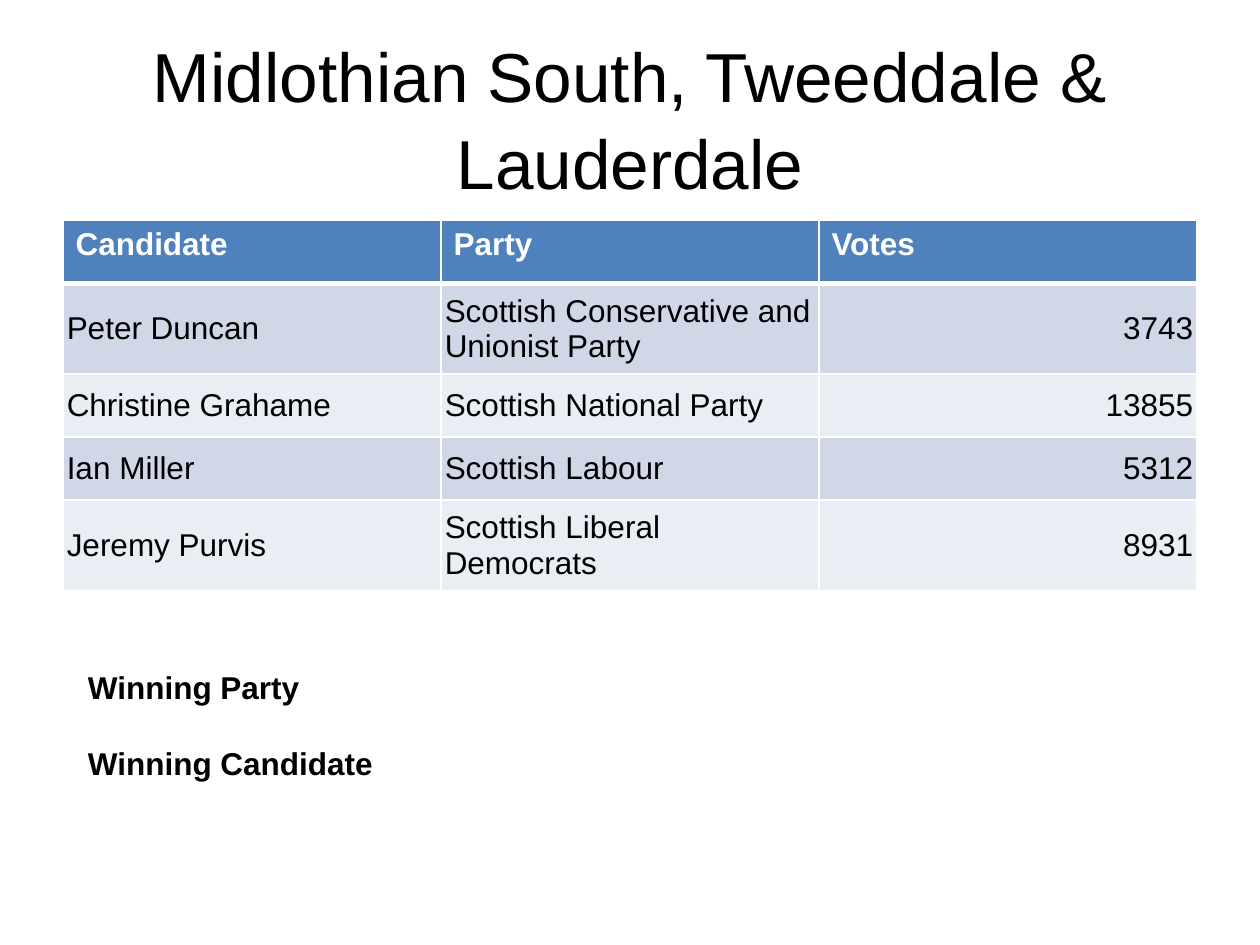
from dataclasses import dataclass

from lxml.etree import SubElement
from pptx import Presentation
from pptx.dml.color import RGBColor
from pptx.enum.text import MSO_ANCHOR, MSO_AUTO_SIZE, PP_ALIGN
from pptx.oxml.ns import qn
from pptx.util import Inches, Pt


@dataclass(frozen=True)
class Theme:
    """Colours, font and type sizes of the results slide."""

    font: str = "Arial"
    title_size: float = 39.6
    body_size: float = 18
    text: str = "000000"
    inverse: str = "FFFFFF"
    header: str = "4F81BD"
    bands: tuple = ("D0D8E8", "E9EDF4")
    thin_rule: float = 1
    thick_rule: float = 3


class ResultsSlide:
    """Draws styled elements on one slide, placed by shares of its size."""

    def __init__(self, presentation, theme):
        """Add a blank slide to the presentation."""
        self.width = presentation.slide_width
        self.height = presentation.slide_height
        self.theme = theme
        self.slide = presentation.slides.add_slide(presentation.slide_layouts[6])

    def place(self, left, top, width, height):
        """Turn shares of the slide into lengths."""
        return (round(left * self.width), round(top * self.height),
                round(width * self.width), round(height * self.height))

    def add_text(self, paragraph, text, size, color, bold=False):
        """Add one styled run to a paragraph."""
        run = paragraph.add_run()
        run.text = text
        run.font.name = self.theme.font
        run.font.size = Pt(size)
        run.font.bold = bold
        run.font.color.rgb = RGBColor.from_string(color)

    def title(self, text, area):
        """Add the centred slide title."""
        frame = self.slide.shapes.add_textbox(*self.place(*area)).text_frame
        frame.word_wrap = True
        frame.vertical_anchor = MSO_ANCHOR.MIDDLE
        paragraph = frame.paragraphs[0]
        paragraph.alignment = PP_ALIGN.CENTER
        paragraph.line_spacing = 1.04
        self.add_text(paragraph, text, self.theme.title_size, self.theme.text)

    def labels(self, texts, area, gap):
        """Add bold labels as spaced paragraphs."""
        frame = self.slide.shapes.add_textbox(*self.place(*area)).text_frame
        frame.word_wrap = True
        frame.auto_size = MSO_AUTO_SIZE.SHAPE_TO_FIT_TEXT
        for index, text in enumerate(texts):
            paragraph = frame.add_paragraph() if index else frame.paragraphs[0]
            paragraph.space_before = Pt(gap if index else 0)
            self.add_text(paragraph, text, self.theme.body_size, self.theme.text, True)

    def borders(self, cell, row):
        """Rule all sides of a cell, with a thick rule below the header."""
        thick_side = {0: "lnB", 1: "lnT"}.get(row)
        properties = cell._tc.get_or_add_tcPr()
        for side in ("lnL", "lnR", "lnT", "lnB"):
            width = self.theme.thick_rule if side == thick_side else self.theme.thin_rule
            line = SubElement(properties, qn(f"a:{side}"), w=str(Pt(width)))
            fill = SubElement(line, qn("a:solidFill"))
            SubElement(fill, qn("a:srgbClr"), val=self.theme.inverse)

    def table(self, rows, area):
        """Add a banded table whose last column holds numbers."""
        theme = self.theme
        columns = len(rows[0])
        frame = self.slide.shapes.add_table(len(rows), columns, *self.place(*area))
        for row, values in enumerate(rows):
            for column, value in enumerate(values):
                cell = frame.table.cell(row, column)
                self.borders(cell, row)
                cell.fill.solid()
                fill = theme.bands[(row - 1) % 2] if row else theme.header
                cell.fill.fore_color.rgb = RGBColor.from_string(fill)
                paragraph = cell.text_frame.paragraphs[0]
                if row:
                    cell.vertical_anchor = MSO_ANCHOR.MIDDLE
                    cell.margin_left = cell.margin_right = Inches(0.03)
                    cell.margin_top = cell.margin_bottom = Inches(0.06)
                    if column == columns - 1:
                        paragraph.alignment = PP_ALIGN.RIGHT
                color = theme.text if row else theme.inverse
                self.add_text(paragraph, value, theme.body_size, color, row == 0)


def main():
    """Build and save the constituency results slide."""
    presentation = Presentation()
    presentation.slide_width = Inches(10)
    presentation.slide_height = Inches(7.5)
    results = ResultsSlide(presentation, Theme())
    results.title("Midlothian South, Tweeddale & Lauderdale",
                  (0.05, 0.04, 0.9, 1 / 6))
    results.table([
        ("Candidate", "Party", "Votes"),
        ("Peter Duncan", "Scottish Conservative and Unionist Party", "3743"),
        ("Christine Grahame", "Scottish National Party", "13855"),
        ("Ian Miller", "Scottish Labour", "5312"),
        ("Jeremy Purvis", "Scottish Liberal Democrats", "8931"),
    ], (0.05, 7 / 30, 0.9, 1 / 3))
    results.labels(("Winning Party", "Winning Candidate"),
                   (0.06, 0.7, 0.85, 0.13), gap=22)
    presentation.save("out.pptx")


if __name__ == "__main__":
    main()
